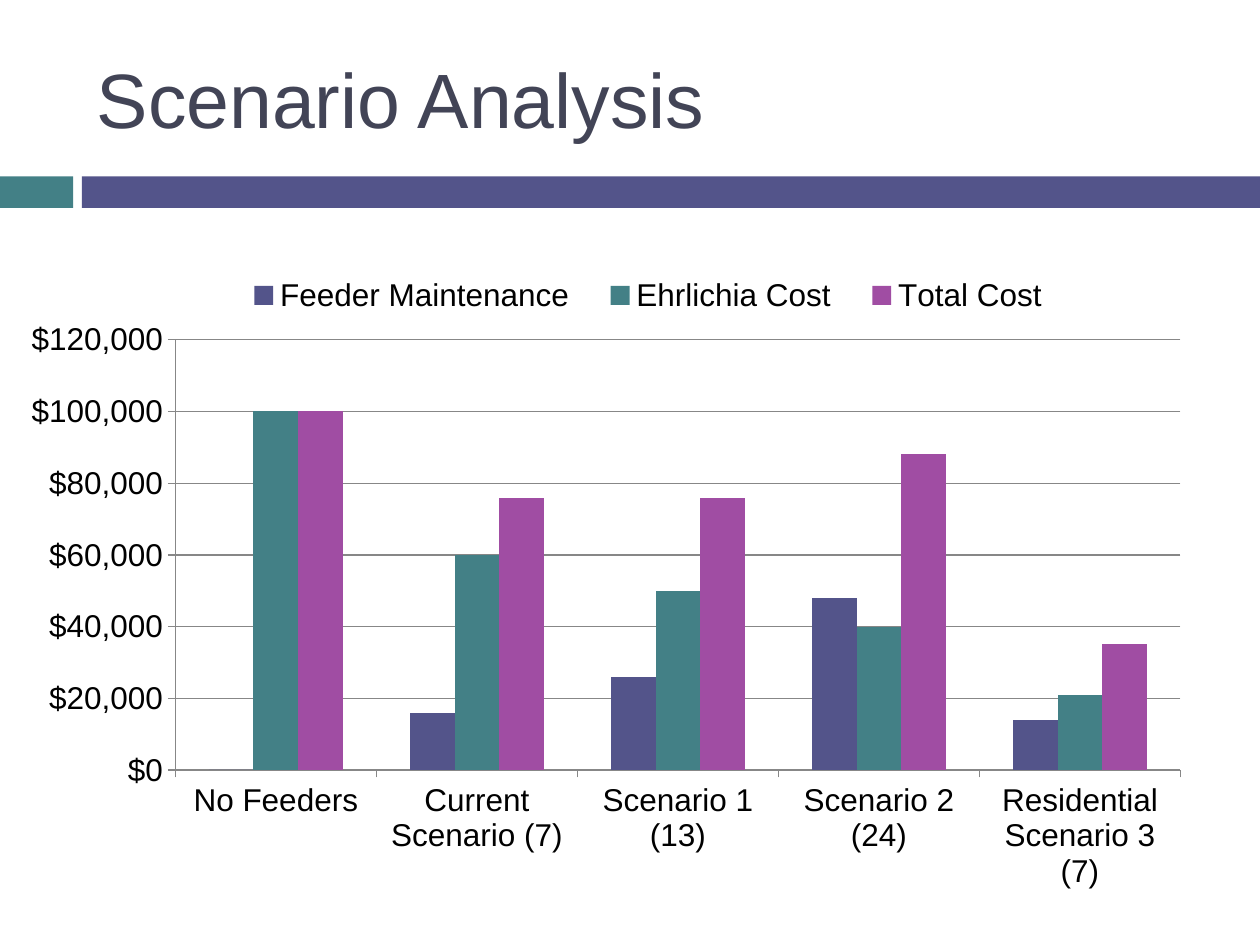
from lxml import etree
from pptx import Presentation
from pptx import util as u
from pptx.chart import data as cd
from pptx.dml import color as dml
from pptx.enum import chart as ch, shapes, text
from pptx.oxml import ns

INDIGO, TEAL, PURPLE = "53548A", "438086", "A04DA3"
SLATE, GREY, BLACK = "424456", "878787", "000000"
CATS = ["No Feeders", "Current Scenario (7)", "Scenario 1 (13)",
        "Scenario 2 (24)", "Residential Scenario 3 (7)"]
COSTS = [
    ("Feeder Maintenance", INDIGO, (0, 16000, 26000, 48000, 14000)),
    ("Ehrlichia Cost", TEAL, (100000, 60000, 50000, 40000, 21000)),
    ("Total Cost", PURPLE, (100000, 76000, 76000, 88000, 35000)),
]
MONEY = '"$"#,##0'


def rgb(code):
    """Return the colour of a hex string."""
    return dml.RGBColor.from_string(code)


def paint(fill, code):
    """Make a fill solid in one colour."""
    fill.solid()
    fill.fore_color.rgb = rgb(code)


def style(font, size, color, name="Arial"):
    """Set the face, size and colour of a font."""
    font.name, font.size = name, u.Pt(size)
    font.color.rgb = rgb(color)


def box(at):
    """Turn left, top, width and height into lengths."""
    return [u.Inches(n) for n in at]


def add_bar(slide, at, color):
    """Add a plain rectangle."""
    bar = slide.shapes.add_shape(shapes.MSO_SHAPE.RECTANGLE, *box(at))
    bar.shadow.inherit = False
    paint(bar.fill, color)
    bar.line.fill.background()


def add_text(slide, at, words, **form):
    """Add a wrapped, vertically centred line of text."""
    frame = slide.shapes.add_textbox(*box(at)).text_frame
    frame.word_wrap = True
    frame.vertical_anchor = text.MSO_ANCHOR.MIDDLE
    run = frame.paragraphs[0].add_run()
    run.text = words
    style(run.font, **form)


def place(part, area, inner=False):
    """Give a chart part a fixed place, in fractions of the chart."""
    for old in part.findall(ns.qn("c:layout")):
        part.remove(old)
    layout = etree.Element(ns.qn("c:layout"))
    manual = etree.SubElement(layout, ns.qn("c:manualLayout"))
    rules = [("layoutTarget", "inner")] if inner else []
    rules += [("xMode", "edge"), ("yMode", "edge"), *zip("xywh", area)]
    for tag, val in rules:
        etree.SubElement(manual, ns.qn("c:" + tag)).set("val", str(val))
    part.insert(0 if inner else 1, layout)


def style_axis(axis):
    """Set the ticks and line of an axis."""
    axis.major_tick_mark = ch.XL_TICK_MARK.OUTSIDE
    axis.minor_tick_mark = ch.XL_TICK_MARK.NONE
    axis.format.line.color.rgb = rgb(GREY)
    style(axis.tick_labels.font, 18, BLACK)


def add_costs(slide, at):
    """Add the clustered column chart of scenario costs."""
    data = cd.CategoryChartData(number_format=MONEY)
    data.categories = CATS
    for name, _, vals in COSTS:
        data.add_series(name, vals)
    chart = slide.shapes.add_chart(
        ch.XL_CHART_TYPE.COLUMN_CLUSTERED, *box(at), data).chart
    style(chart.font, 18, BLACK)
    chart.has_title = False
    plot = chart.plots[0]
    plot.gap_width, plot.overlap, plot.vary_by_categories = 150, 0, False
    for series, (_, color, _) in zip(plot.series, COSTS):
        paint(series.format.fill, color)
        series.invert_if_negative = False
    style_axis(chart.category_axis)
    axis = chart.value_axis
    style_axis(axis)
    axis.minimum_scale, axis.maximum_scale, axis.major_unit = 0, 120000, 20000
    axis.has_major_gridlines = True
    axis.major_gridlines.format.line.color.rgb = rgb(GREY)
    axis.tick_labels.number_format = MONEY
    axis.tick_labels.number_format_is_linked = False
    chart.has_legend = True
    legend = chart.legend
    legend.position = ch.XL_LEGEND_POSITION.RIGHT
    legend.include_in_layout = False
    style(legend.font, 18, BLACK)
    place(legend._element, (0.16, 0.05, 0.71, 0.09))
    area = chart._chartSpace.find(".//" + ns.qn("c:plotArea"))
    place(area, (0.12, 0.16, 0.84, 0.63), inner=True)


def main():
    """Build the slide and save it."""
    deck = Presentation()
    deck.slide_width, deck.slide_height = u.Inches(10), u.Inches(7.5)
    slide = deck.slides.add_slide(deck.slide_layouts[6])
    add_bar(slide, (0, 1.4, 0.58, 0.25), TEAL)
    add_bar(slide, (0.65, 1.4, 9.35, 0.25), INDIGO)
    add_text(slide, (0.67, 0.3, 8.83, 0.95), "Scenario Analysis",
             size=44, color=SLATE)
    add_costs(slide, (0.25, 1.83, 9.5, 5.42))
    deck.save("out.pptx")


if __name__ == "__main__":
    main()
